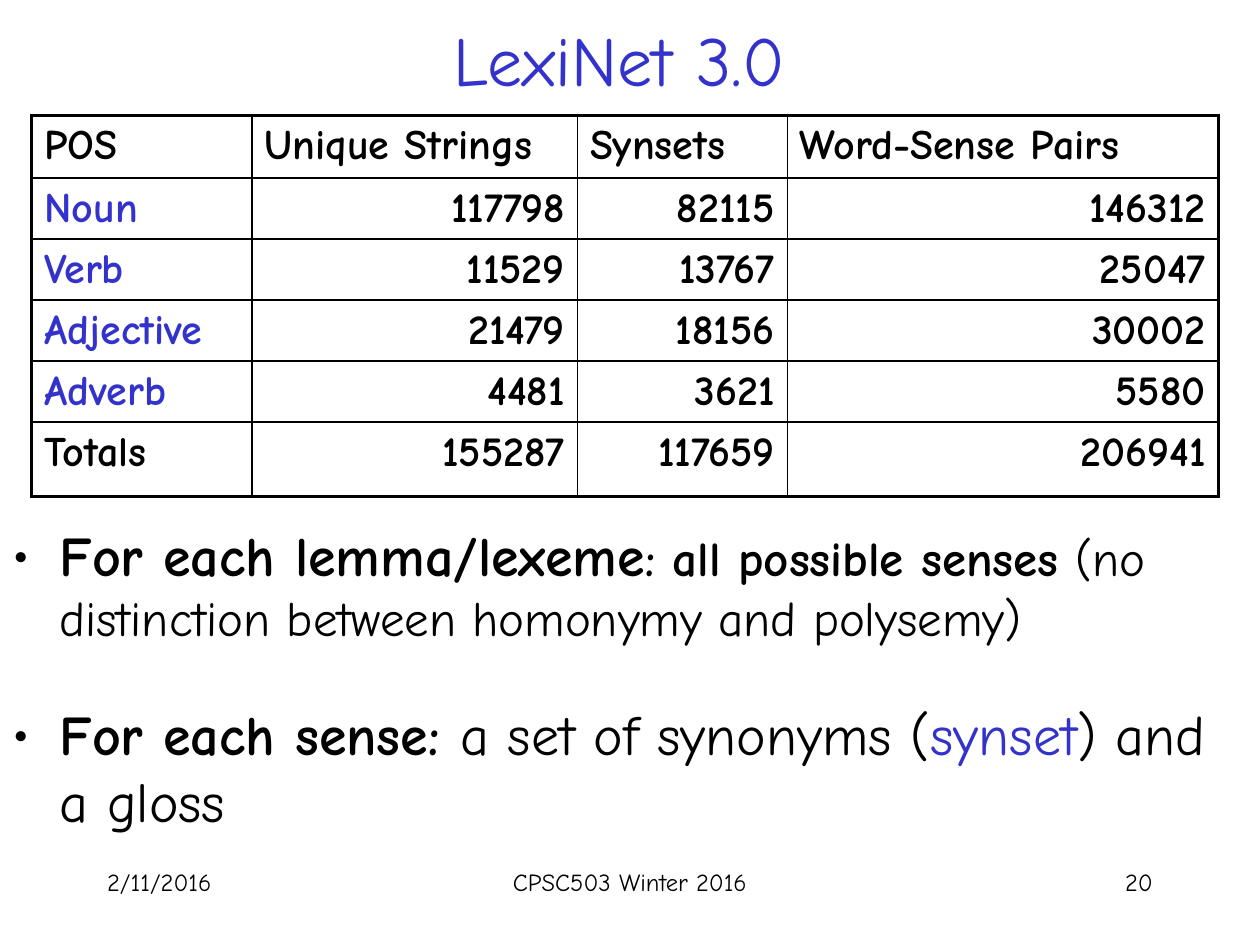
"""Build the LexiNet 3.0 statistics slide."""
import dataclasses

import lxml.etree
import pptx
import pptx.dml.color
import pptx.enum.text
import pptx.oxml
import pptx.oxml.ns
import pptx.util

Cm = pptx.util.Cm
Pt = pptx.util.Pt
Align = pptx.enum.text.PP_ALIGN
Anchor = pptx.enum.text.MSO_ANCHOR


@dataclasses.dataclass(frozen=True)
class Theme:
    font: str = "Comic Neue"
    text: pptx.dml.color.RGBColor = pptx.dml.color.RGBColor(0, 0, 0)
    accent: pptx.dml.color.RGBColor = pptx.dml.color.RGBColor(0x33, 0x33, 0xCC)
    title: int = 40
    body: int = 32
    body_small: int = 28
    table: int = 24
    footer: int = 14
    outer_border: float = 2.25
    inner_border: float = 1


theme = Theme()


def style(font, size, color=theme.text, bold=False):
    font.name = theme.font
    font.size = Pt(size)
    font.color.rgb = color
    font.bold = bold


def add_text(left, top, width, height, alignment=Align.LEFT, anchor=Anchor.TOP):
    frame = slide.shapes.add_textbox(Cm(left), Cm(top), Cm(width), Cm(height)).text_frame
    frame.word_wrap = True
    frame.vertical_anchor = anchor
    paragraph = frame.paragraphs[0]
    paragraph.alignment = alignment
    return paragraph


presentation = pptx.Presentation()
presentation.slide_width = Cm(25.4)
presentation.slide_height = Cm(19.05)
slide = presentation.slides.add_slide(presentation.slide_layouts[6])

title = add_text(1.69, -0.42, 21.59, 3.18, Align.CENTER, Anchor.MIDDLE)
title.text = "LexiNet 3.0"
style(title.font, theme.title, theme.accent)

table_rows = [
    ("POS", "Unique Strings", "Synsets", "Word-Sense Pairs"),
    ("Noun", "117798", "82115", "146312"),
    ("Verb", "11529", "13767", "25047"),
    ("Adjective", "21479", "18156", "30002"),
    ("Adverb", "4481", "3621", "5580"),
    ("Totals", "155287", "117659", "206941"),
]
column_widths = [4.44, 6.56, 4.23, 8.69]
row_heights = [1.26, 1.23, 1.23, 1.23, 1.23, 1.5]
last_row, last_column = len(row_heights) - 1, len(column_widths) - 1
table = slide.shapes.add_table(
    len(row_heights), len(column_widths), Cm(0.64), Cm(2.33),
    Cm(sum(column_widths)), Cm(sum(row_heights)),
).table
table.first_row = False
table.horz_banding = False
for column, width in zip(table.columns, column_widths):
    column.width = Cm(width)
for row, height in zip(table.rows, row_heights):
    row.height = Cm(height)

for row_index, values in enumerate(table_rows):
    for column_index, value in enumerate(values):
        cell = table.cell(row_index, column_index)
        cell.fill.background()
        cell.margin_bottom = Cm(0.05)
        paragraph = cell.text_frame.paragraphs[0]
        paragraph.text = value
        is_number = row_index > 0 and column_index > 0
        is_category = column_index == 0 and 0 < row_index < last_row
        paragraph.alignment = Align.RIGHT if is_number else Align.LEFT
        style(paragraph.font, theme.table, theme.accent if is_category else theme.text, True)
        edges = {
            "L": column_index == 0,
            "R": column_index == last_column,
            "T": row_index == 0,
            "B": row_index == last_row,
        }
        properties = cell._tc.get_or_add_tcPr()
        for position, (side, is_outer) in enumerate(edges.items()):
            border_width = Pt(theme.outer_border if is_outer else theme.inner_border)
            properties.insert(position, pptx.oxml.parse_xml(
                f'<a:ln{side} {pptx.oxml.ns.nsdecls("a")} w="{border_width}"><a:solidFill>'
                f'<a:srgbClr val="{theme.text}"/></a:solidFill></a:ln{side}>'
            ))

bullets = [
    (10.36, [
        ("For each lemma/lexeme", theme.body, theme.text, True),
        (": all possible senses ", theme.body_small, theme.text, True),
        ("(no distinction between homonymy and polysemy)", theme.body_small, theme.text, False),
    ]),
    (13.97, [
        ("For each sense: ", theme.body, theme.text, True),
        ("a set of synonyms (", theme.body, theme.text, False),
        ("synset", theme.body, theme.accent, False),
        (") and a gloss", theme.body, theme.text, False),
    ]),
]
for top, runs in bullets:
    paragraph = add_text(0, top, 24.77, 3.81)
    paragraph.space_before = Pt(4)
    properties = paragraph._p.get_or_add_pPr()
    properties.set("marL", str(Cm(0.95)))
    properties.set("indent", str(-Cm(0.95)))
    lxml.etree.SubElement(properties, pptx.oxml.ns.qn("a:buFont")).set("typeface", theme.font)
    lxml.etree.SubElement(properties, pptx.oxml.ns.qn("a:buChar")).set("char", "•")
    for text, size, color, bold in runs:
        run = paragraph.add_run()
        run.text = text
        style(run.font, size, color, bold)

footers = [
    (1.91, 5.29, "2/11/2016", Align.LEFT),
    (8.68, 8.04, "CPSC503 Winter 2016", Align.CENTER),
    (18.2, 5.29, "20", Align.RIGHT),
]
for left, width, text, alignment in footers:
    paragraph = add_text(left, 17.36, width, 1.27, alignment)
    paragraph.text = text
    style(paragraph.font, theme.footer)

presentation.save("out.pptx")
